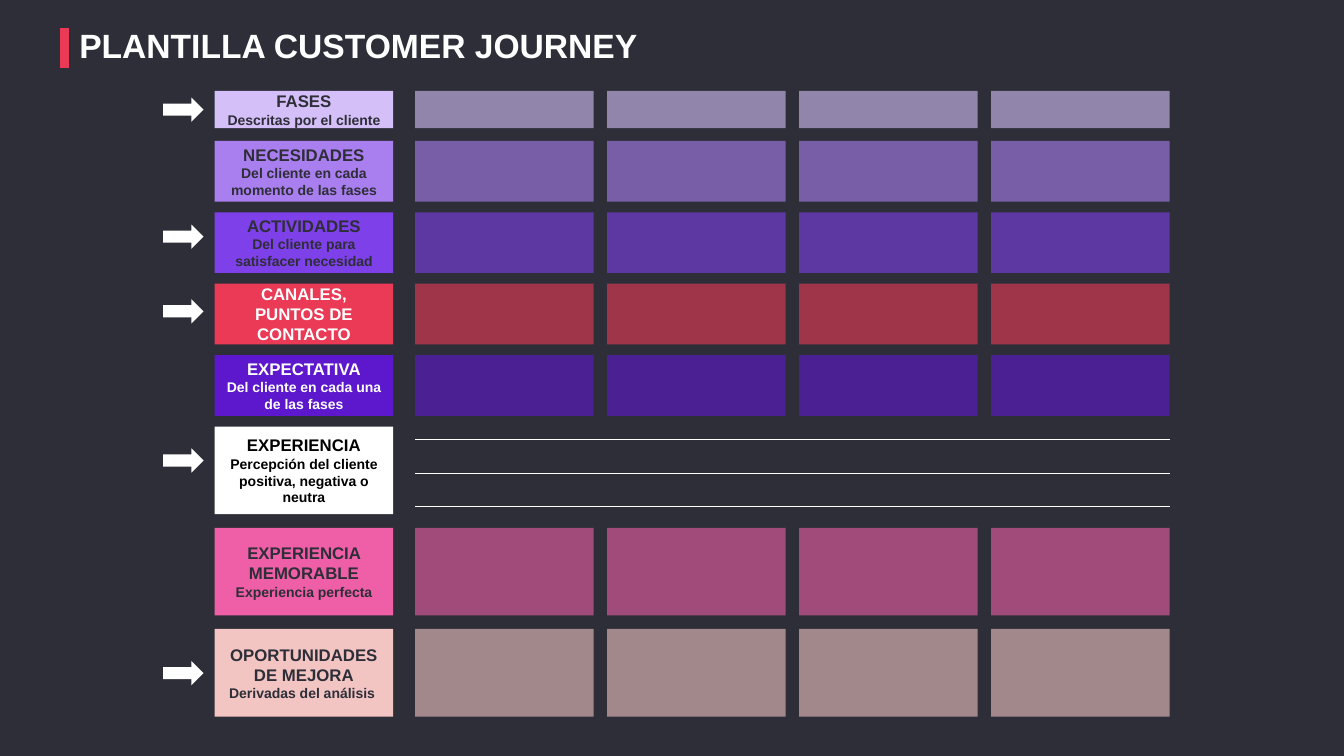
from lxml import etree
from pptx import Presentation
from pptx.dml.color import RGBColor
from pptx.enum import shapes, text
from pptx.oxml import ns
from pptx.util import Cm, Pt

DARK = RGBColor(0x2E, 0x2E, 0x38)
WHITE = RGBColor(0xFF, 0xFF, 0xFF)
BLACK = RGBColor(0x00, 0x00, 0x00)
RED = RGBColor(0xEA, 0x3A, 0x55)
LILAC = RGBColor(0xD4, 0xBF, 0xF8)
LAVENDER = RGBColor(0xA9, 0x7F, 0xF0)
VIOLET = RGBColor(0x7E, 0x40, 0xE9)
INDIGO = RGBColor(0x5D, 0x18, 0xCE)
PINK = RGBColor(0xEF, 0x5F, 0xA7)
PEACH = RGBColor(0xF2, 0xC5, 0xC3)

# Grid, in centimetres
LABEL_X, CELL_W = 5.41, 4.5
GRID_X, PITCH, COLUMNS = 10.46, 4.84, 4
GRID_RIGHT = GRID_X + (COLUMNS - 1) * PITCH + CELL_W
ARROW_X, ARROW_W, ARROW_H = 4.11, 1.02, 0.61

# Top, height, fill, text colour, heading, detail, arrow top, has cells
ROWS = [
    (2.29, 0.94, LILAC, DARK, "FASES", "Descritas por el cliente", 2.46, True),
    (3.55, 1.53, LAVENDER, DARK, "NECESIDADES",
     "Del cliente en cada momento de las fases", None, True),
    (5.35, 1.53, VIOLET, DARK, "ACTIVIDADES",
     "Del cliente para satisfacer necesidad", 5.66, True),
    (7.15, 1.53, RED, WHITE, "CANALES, PUNTOS DE CONTACTO", None, 7.54, True),
    (8.95, 1.53, INDIGO, WHITE, "EXPECTATIVA",
     "Del cliente en cada una de las fases", None, True),
    (10.75, 2.21, WHITE, BLACK, "EXPERIENCIA",
     "Percepción del cliente positiva, negativa o neutra", 11.3, False),
    (13.3, 2.21, PINK, DARK, "EXPERIENCIA MEMORABLE",
     "Experiencia perfecta", None, True),
    (15.85, 2.21, PEACH, DARK, "OPORTUNIDADES DE MEJORA",
     "Derivadas del análisis ", 16.66, True),
]


def add_text(p, content, size=12, color=WHITE, align=text.PP_ALIGN.CENTER):
    p.alignment = align
    r = p.add_run()
    r.text = content
    r.font.name, r.font.size, r.font.bold = "Arial", Pt(size), True
    r.font.color.rgb = color


def add_block(s, kind, x, y, w, h, color, alpha=None):
    sp = s.shapes.add_shape(kind, Cm(x), Cm(y), Cm(w), Cm(h))
    sp.shadow.inherit = False
    sp.fill.solid()
    sp.fill.fore_color.rgb = color
    sp.line.fill.background()
    if alpha is not None:
        clr = sp.fill._xPr.find(".//" + ns.qn("a:srgbClr"))
        etree.SubElement(clr, ns.qn("a:alpha")).set("val", str(alpha * 1000))
    return sp


def add_line(s, x1, y1, x2, y2, color, width):
    cn = s.shapes.add_connector(shapes.MSO_CONNECTOR.STRAIGHT,
                                Cm(x1), Cm(y1), Cm(x2), Cm(y2))
    cn.line.color.rgb = color
    cn.line.width = Pt(width)
    etree.SubElement(cn._element.spPr, ns.qn("a:effectLst"))


def add_title(s, content):
    add_line(s, 1.63, 0.71, 1.63, 1.71, RED, 6)
    tf = s.shapes.add_textbox(Cm(1.75), Cm(0.51), Cm(27.66), Cm(1.28)).text_frame
    tf.word_wrap = True
    add_text(tf.paragraphs[0], content, size=24, align=text.PP_ALIGN.LEFT)


def add_label(s, top, height, fill, color, heading, detail):
    sp = add_block(s, shapes.MSO_SHAPE.RECTANGLE, LABEL_X, top, CELL_W, height, fill)
    tf = sp.text_frame
    tf.word_wrap = True
    tf.vertical_anchor = text.MSO_ANCHOR.MIDDLE
    add_text(tf.paragraphs[0], heading, color=color)
    if detail:
        add_text(tf.add_paragraph(), detail, size=10, color=color)


def main():
    prs = Presentation()
    prs.slide_width, prs.slide_height = Cm(33.87), Cm(19.05)
    s = prs.slides.add_slide(prs.slide_layouts[6])
    s.background.fill.solid()
    s.background.fill.fore_color.rgb = DARK

    add_title(s, "PLANTILLA CUSTOMER JOURNEY")

    # Journey rows: label, empty cells and arrow
    for top, height, fill, color, heading, detail, arrow_top, has_cells in ROWS:
        add_label(s, top, height, fill, color, heading, detail)
        if has_cells:
            for col in range(COLUMNS):
                add_block(s, shapes.MSO_SHAPE.RECTANGLE, GRID_X + col * PITCH, top,
                          CELL_W, height, fill, alpha=60)
        if arrow_top is not None:
            add_block(s, shapes.MSO_SHAPE.RIGHT_ARROW, ARROW_X, arrow_top,
                      ARROW_W, ARROW_H, WHITE)

    # Experience levels: positive, neutral, negative
    for level in range(3):
        y = 11.07 + level * 0.85
        add_line(s, GRID_X, y, GRID_RIGHT, y, WHITE, 0.75)

    prs.save("out.pptx")


if __name__ == "__main__":
    main()
